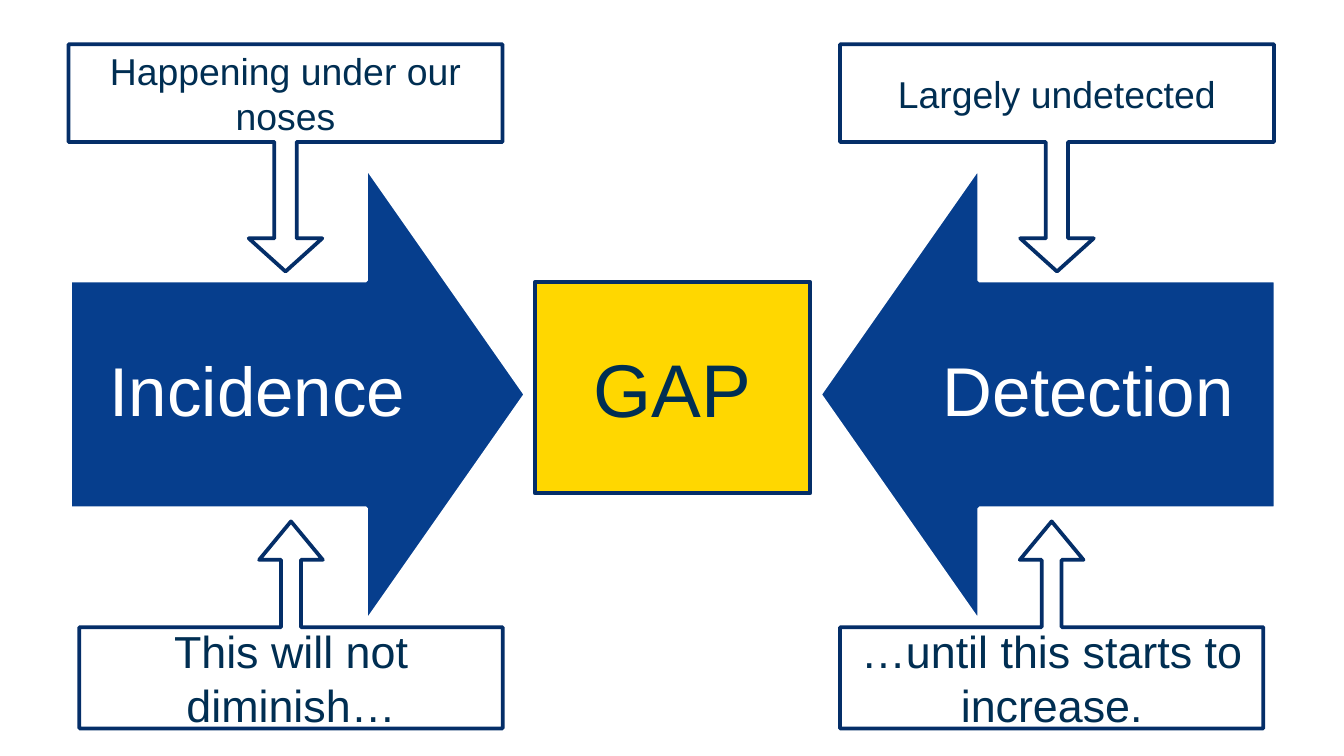
from pptx import Presentation
from pptx.dml.color import RGBColor
from pptx.enum.shapes import MSO_SHAPE
from pptx.enum.text import MSO_ANCHOR, PP_ALIGN
from pptx.util import Inches, Pt

ARROW = MSO_SHAPE.DOWN_ARROW
RECT = MSO_SHAPE.RECTANGLE
DOWN = MSO_SHAPE.DOWN_ARROW_CALLOUT
UP = MSO_SHAPE.UP_ARROW_CALLOUT
MIDDLE = MSO_ANCHOR.MIDDLE
CENTER = PP_ALIGN.CENTER

WHITE, BLUE, GOLD, NAVY, INK = "FFFFFF", "063E8D", "FFD700", "042E68", "002E52"
DOWN_ADJ = (0.098, 0.162, 0.146, 0.43)
UP_ADJ = (0.096, 0.154, 0.186, 0.489)


def color(code):
    return RGBColor.from_string(code)


def write(shape, text, size, ink):
    frame = shape.text_frame
    frame.word_wrap = True
    frame.vertical_anchor = MIDDLE
    frame.text = text
    para = frame.paragraphs[0]
    para.alignment = CENTER
    font = para.runs[0].font
    font.name = "Arial"
    font.size = Pt(size)
    font.color.rgb = color(ink)
    return frame


def draw(slide, kind, box, fill, line, adjust=()):
    shape = slide.shapes.add_shape(kind, *map(Inches, box))
    shape.shadow.inherit = False
    shape.fill.solid()
    shape.fill.fore_color.rgb = color(fill)
    shape.line.color.rgb = color(line)
    shape.line.width = Pt(2)
    for index, value in enumerate(adjust):
        shape.adjustments[index] = value
    return shape


def add_arrow(slide, box, text, turn, inset):
    left, top, width, height = box
    arrow = draw(slide, ARROW, box, BLUE, WHITE, (0.5, 0.35))
    arrow.rotation = turn
    area = (left + inset, top + height / 4, 2.79, height / 2)
    label = slide.shapes.add_textbox(*map(Inches, area))
    frame = write(label, text, 37, WHITE)
    frame.margin_left = frame.margin_right = Inches(0.29)
    frame.margin_top = frame.margin_bottom = Inches(0.29)
    frame.paragraphs[0].line_spacing = 0.9


def add_gap(slide, box):
    write(draw(slide, RECT, box, GOLD, NAVY), "GAP", 40, INK)


def add_note(slide, kind, box, text, size, adjust):
    write(draw(slide, kind, box, WHITE, NAVY, adjust), text, size, INK)


def main():
    deck = Presentation()
    deck.slide_width = Inches(10)
    deck.slide_height = Inches(10 * 9 / 16)
    slide = deck.slides.add_slide(deck.slide_layouts[6])

    add_arrow(slide, (0.52, 1.24, 3.39, 3.39), "Incidence", 270, 0)
    add_arrow(slide, (6.1, 1.24, 3.39, 3.39), "Detection", 90, 0.6)
    add_gap(slide, (3.98, 2.1, 2.05, 1.57))

    for left, text in ((0.51, "Happening under our noses"), (6.25, "Largely undetected")):
        add_note(slide, DOWN, (left, 0.33, 3.23, 1.69), text, 20, DOWN_ADJ)
    for left, text in ((0.59, "This will not diminish…"), (6.25, "…until this starts to increase.")):
        add_note(slide, UP, (left, 3.88, 3.15, 1.54), text, 24, UP_ADJ)

    deck.save("out.pptx")


if __name__ == "__main__":
    main()
